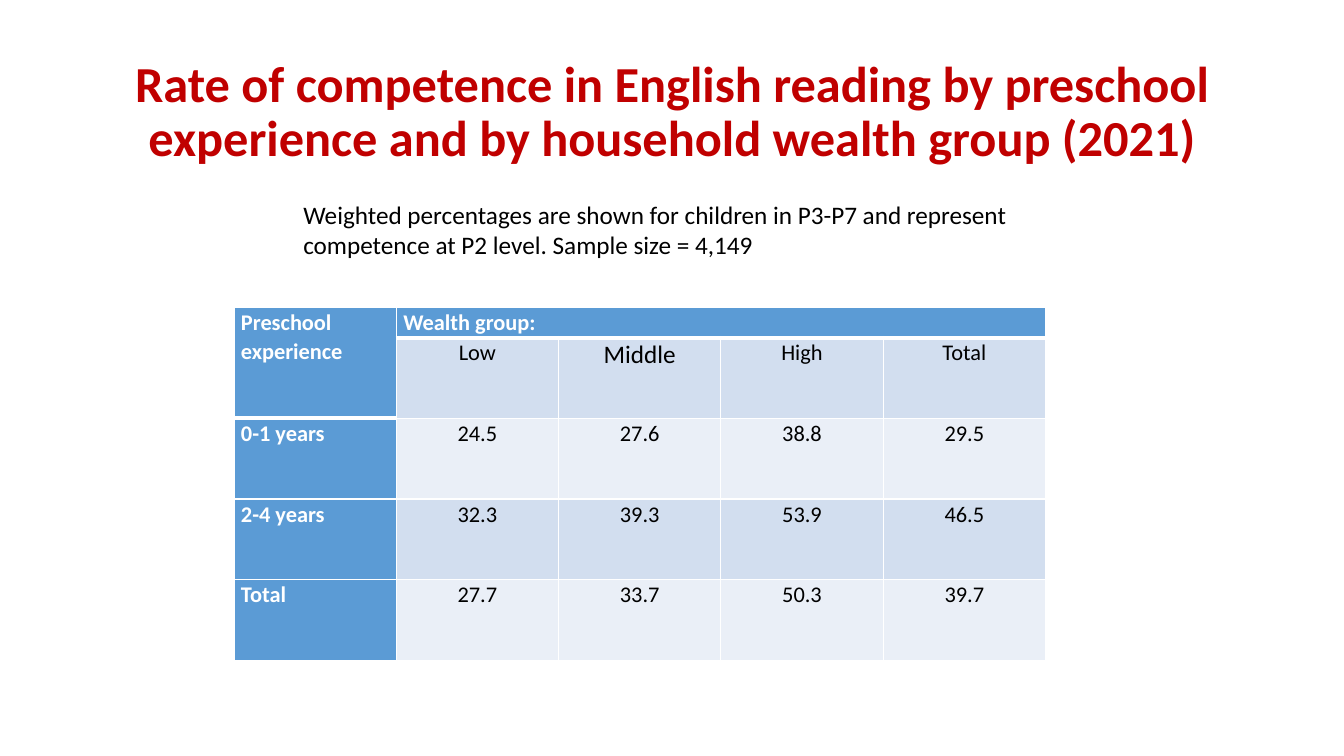
from dataclasses import dataclass

import pptx
import pptx.dml.color
import pptx.enum.text
import pptx.oxml
import pptx.oxml.ns
import pptx.util

Inches = pptx.util.Inches
Pt = pptx.util.Pt
RGBColor = pptx.dml.color.RGBColor
Align = pptx.enum.text.PP_ALIGN
Anchor = pptx.enum.text.MSO_ANCHOR

RED = RGBColor(0xC0, 0x00, 0x00)
BLACK = RGBColor(0x00, 0x00, 0x00)
WHITE = RGBColor(0xFF, 0xFF, 0xFF)
HEADER_BLUE = RGBColor(0x5B, 0x9B, 0xD5)
BAND_DARK = RGBColor(0xD2, 0xDE, 0xEF)
BAND_LIGHT = RGBColor(0xEA, 0xEF, 0xF7)

COLUMN_WIDTH = 1.61
ROW_HEIGHTS = (0.3, 0.8, 0.8, 0.8, 0.8)
ROWS = (
    ("Preschool experience", "Wealth group:", "", "", ""),
    ("", "Low", "Middle", "High", "Total"),
    ("0-1 years", "24.5", "27.6", "38.8", "29.5"),
    ("2-4 years", "32.3", "39.3", "53.9", "46.5"),
    ("Total", "27.7", "33.7", "50.3", "39.7"),
)


@dataclass(frozen=True)
class TextBlock:
    text: str
    left: float
    top: float
    width: float
    height: float
    font: dict
    frame: dict
    paragraph: dict


TEXT_BLOCKS = (
    TextBlock(
        "Rate of competence in English reading by preschool experience "
        "and by household wealth group (2021)",
        0.92, 0.4, 11.5, 1.45,
        {"size": Pt(36), "bold": True, "color": RED},
        {"vertical_anchor": Anchor.MIDDLE},
        {"alignment": Align.CENTER, "line_spacing": 0.9},
    ),
    TextBlock(
        "Weighted percentages are shown for children in P3-P7 and represent "
        "competence at P2 level. Sample size = 4,149",
        2.91, 1.93, 7.24, 0.71,
        {"size": Pt(18), "bold": False, "color": BLACK},
        {"vertical_anchor": Anchor.TOP},
        {"alignment": Align.LEFT},
    ),
)


def set_attributes(target: object, values: dict) -> None:
    for name, value in values.items():
        setattr(target, name, value)


def write_text(text_frame, text: str, font: dict, paragraph_format: dict) -> None:
    paragraph = text_frame.paragraphs[0]
    set_attributes(paragraph, paragraph_format)
    run = paragraph.add_run()
    run.text = text
    set_attributes(run.font, {"name": "Calibri", "size": font["size"], "bold": font["bold"]})
    run.font.color.rgb = font["color"]


def add_text_block(slide, block: TextBlock) -> None:
    shape = slide.shapes.add_textbox(
        Inches(block.left), Inches(block.top), Inches(block.width), Inches(block.height)
    )
    set_attributes(shape.text_frame, {"word_wrap": True, **block.frame})
    write_text(shape.text_frame, block.text, block.font, block.paragraph)


def add_borders(cell, top_width: int, bottom_width: int) -> None:
    properties = cell._tc.get_or_add_tcPr()
    widths = {"lnL": 1, "lnR": 1, "lnT": top_width, "lnB": bottom_width}
    for position, (side, width) in enumerate(widths.items()):
        border = pptx.oxml.parse_xml(
            f'<a:{side} {pptx.oxml.ns.nsdecls("a")} w="{Pt(width)}">'
            f'<a:solidFill><a:srgbClr val="{WHITE}"/></a:solidFill></a:{side}>'
        )
        properties.insert(position, border)


def fill_cell(cell, row: int, column: int) -> None:
    is_header = row == 0 or column == 0
    band = BAND_DARK if row % 2 else BAND_LIGHT
    cell.fill.solid()
    cell.fill.fore_color.rgb = HEADER_BLUE if is_header else band
    set_attributes(cell, {
        "margin_left": Inches(0.07), "margin_right": Inches(0.07),
        "margin_top": 0, "margin_bottom": 0,
    })
    last_header_row = 1 if column == 0 else 0
    add_borders(
        cell,
        top_width=3 if row == last_header_row + 1 else 1,
        bottom_width=3 if row <= last_header_row else 1,
    )
    text = ROWS[row][column]
    if text:
        font = {
            "size": Pt(18 if text == "Middle" else 16),
            "bold": is_header,
            "color": WHITE if is_header else BLACK,
        }
        write_text(cell.text_frame, text, font, {
            "alignment": Align.LEFT if is_header else Align.CENTER,
            "line_spacing": 1.07,
            "space_after": Pt(8),
        })


def add_competence_table(slide) -> None:
    column_count = len(ROWS[0])
    table = slide.shapes.add_table(
        len(ROWS), column_count, Inches(2.32), Inches(3.05),
        Inches(COLUMN_WIDTH * column_count), Inches(sum(ROW_HEIGHTS)),
    ).table
    for column in table.columns:
        column.width = Inches(COLUMN_WIDTH)
    for row, height in zip(table.rows, ROW_HEIGHTS):
        row.height = Inches(height)
    table.cell(0, 0).merge(table.cell(1, 0))
    table.cell(0, 1).merge(table.cell(0, column_count - 1))
    for row in range(len(ROWS)):
        for column in range(column_count):
            fill_cell(table.cell(row, column), row, column)


def main() -> None:
    presentation = pptx.Presentation()
    presentation.slide_width = Inches(13.33)
    presentation.slide_height = Inches(7.5)
    slide = presentation.slides.add_slide(presentation.slide_layouts[6])
    add_competence_table(slide)
    for block in TEXT_BLOCKS:
        add_text_block(slide, block)
    presentation.save("out.pptx")


if __name__ == "__main__":
    main()
